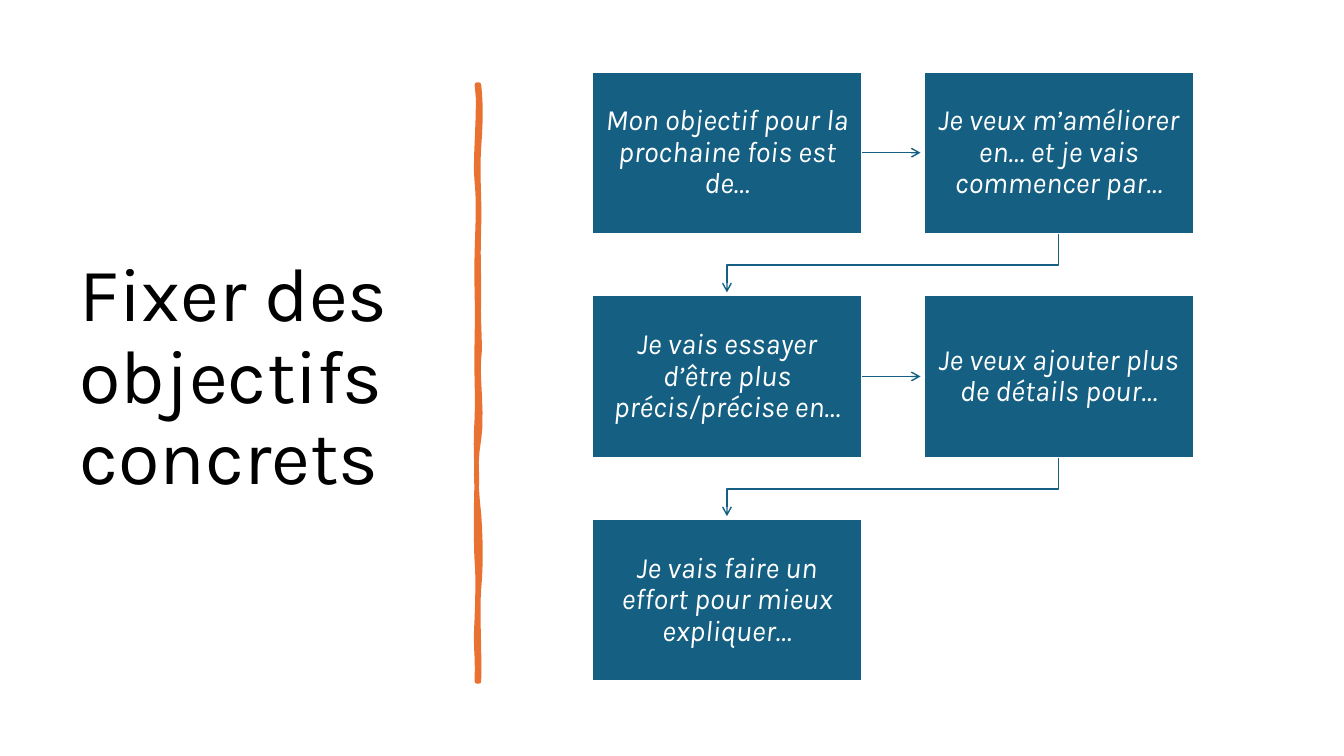
from lxml import etree
from pptx import Presentation
from pptx.dml.color import RGBColor
from pptx.enum.shapes import MSO_CONNECTOR, MSO_SHAPE
from pptx.enum.text import MSO_ANCHOR, PP_ALIGN
from pptx.oxml.ns import qn
from pptx.util import Inches, Pt

RECTANGLE = MSO_SHAPE.RECTANGLE
STRAIGHT = MSO_CONNECTOR.STRAIGHT
MIDDLE = MSO_ANCHOR.MIDDLE
LEFT, CENTER = PP_ALIGN.LEFT, PP_ALIGN.CENTER

FONT = "Karla"
BLUE, ORANGE, WHITE, BLACK = "156082", "E97132", "FFFFFF", "000000"

GOALS = [
    "Mon objectif pour la prochaine fois est de…",
    "Je veux m’améliorer en… et je vais commencer par…",
    "Je vais essayer d’être plus précis/précise en…",
    "Je veux ajouter plus de détails pour…",
    "Je vais faire un effort pour mieux expliquer…",
]
COLUMNS = 2
GRID_LEFT, GRID_TOP = 5.87, 0.71
COLUMN_PITCH, ROW_PITCH = 3.29, 2.22
BOX_WIDTH, BOX_HEIGHT = 2.68, 1.61
ARROW_GAP = 0.03
BEND_DROP = 0.31

BRUSH_START = (4.75, 0.84)
BRUSH_CURVES = [
    ((4.77, 1.02), (4.77, 1.19), (4.75, 1.46)),
    ((4.73, 1.73), (4.76, 1.95), (4.75, 2.26)),
    ((4.74, 2.57), (4.75, 2.62), (4.75, 2.94)),
    ((4.74, 3.25), (4.77, 3.42), (4.75, 3.56)),
    ((4.73, 3.7), (4.79, 4.14), (4.75, 4.36)),
    ((4.71, 4.57), (4.72, 4.84), (4.75, 5.1)),
    ((4.77, 5.36), (4.77, 5.64), (4.75, 5.84)),
    ((4.73, 6.03), (4.76, 6.5), (4.75, 6.76)),
    ((4.74, 6.76), (4.73, 6.76), (4.73, 6.76)),
    ((4.74, 6.46), (4.71, 6.44), (4.73, 6.13)),
    ((4.74, 5.83), (4.74, 5.7), (4.73, 5.57)),
    ((4.72, 5.44), (4.72, 4.95), (4.73, 4.77)),
    ((4.73, 4.59), (4.71, 4.45), (4.73, 4.15)),
    ((4.74, 3.86), (4.72, 3.73), (4.73, 3.35)),
    ((4.74, 2.98), (4.72, 2.81), (4.73, 2.5)),
    ((4.74, 2.18), (4.75, 2), (4.73, 1.81)),
    ((4.7, 1.63), (4.77, 1.04), (4.73, 0.84)),
]
CURVE_STEPS = 6


def color(hex_value):
    """Turn a hex string into a colour."""
    return RGBColor.from_string(hex_value)


def set_line(shape, hex_value, width):
    """Give a shape or connector a solid line."""
    shape.line.color.rgb = color(hex_value)
    shape.line.width = Pt(width)


def add_line_detail(shape, tag, **attributes):
    """Append a join or an arrowhead to the line of a shape."""
    line = shape.line._get_or_add_ln()
    etree.SubElement(line, qn(tag), attributes)


def write_text(shape, text, size, hex_value, align=LEFT, italic=False, insets=(0.1, 0.05)):
    """Write one vertically centred paragraph in a shape."""
    frame = shape.text_frame
    frame.word_wrap = True
    frame.vertical_anchor = MIDDLE
    frame.margin_left = frame.margin_right = Inches(insets[0])
    frame.margin_top = frame.margin_bottom = Inches(insets[1])
    paragraph = frame.paragraphs[0]
    paragraph.alignment = align
    paragraph.line_spacing = 0.9
    run = paragraph.add_run()
    run.text = text
    run.font.name = FONT
    run.font.size = Pt(size)
    run.font.italic = italic
    run.font.color.rgb = color(hex_value)


def add_title(slide, text):
    """Add the slide title on the left."""
    box = slide.shapes.add_textbox(Inches(0.69), Inches(0.7), Inches(3.74), Inches(6.11))
    write_text(box, text, 54, BLACK)


def add_freeform(slide, points, closed):
    """Add an outline through points given in inches."""
    vertices = [(Inches(x), Inches(y)) for x, y in points]
    builder = slide.shapes.build_freeform(*vertices[0])
    builder.add_line_segments(vertices[1:], close=closed)
    shape = builder.convert_to_shape()
    shape.shadow.inherit = False
    return shape


def curve_points(start, curves):
    """Sample a chain of cubic curves."""
    points = [start]
    for first, second, end in curves:
        corners = (points[-1], first, second, end)
        for step in range(1, CURVE_STEPS + 1):
            t = step / CURVE_STEPS
            weights = ((1 - t) ** 3, 3 * t * (1 - t) ** 2, 3 * t * t * (1 - t), t ** 3)
            points.append(tuple(
                sum(weight * corner[axis] for weight, corner in zip(weights, corners))
                for axis in (0, 1)
            ))
    return points


def add_brush_stroke(slide):
    """Add the hand-drawn vertical divider."""
    stroke = add_freeform(slide, curve_points(BRUSH_START, BRUSH_CURVES), closed=True)
    stroke.fill.solid()
    stroke.fill.fore_color.rgb = color(ORANGE)
    set_line(stroke, ORANGE, 3.25)
    add_line_detail(stroke, "a:round")


def add_goal_box(slide, text, left, top):
    """Add one goal box."""
    box = slide.shapes.add_shape(
        RECTANGLE, Inches(left), Inches(top), Inches(BOX_WIDTH), Inches(BOX_HEIGHT))
    box.shadow.inherit = False
    box.fill.solid()
    box.fill.fore_color.rgb = color(BLUE)
    set_line(box, WHITE, 1.5)
    write_text(box, text, 21, WHITE, align=CENTER, italic=True, insets=(0.13, 0.14))
    return box


def style_arrow(shape):
    """Give a line the flow arrow look."""
    set_line(shape, BLUE, 1)
    add_line_detail(shape, "a:tailEnd", type="arrow")


def add_straight_arrow(slide, box, left, top):
    """Add an arrow from a box to its right neighbour."""
    middle = Inches(top + BOX_HEIGHT / 2)
    arrow = slide.shapes.add_connector(
        STRAIGHT, Inches(left + BOX_WIDTH), middle,
        Inches(left + COLUMN_PITCH - ARROW_GAP), middle)
    arrow.begin_connect(box, 3)
    style_arrow(arrow)
    etree.SubElement(arrow._element.spPr, qn("a:effectLst"))


def add_bent_arrow(slide, left, top):
    """Add an arrow from the end of a row to the start of the next."""
    start_x = left + BOX_WIDTH / 2
    end_x = GRID_LEFT + BOX_WIDTH / 2
    bottom = top + BOX_HEIGHT
    bend = bottom + BEND_DROP
    points = [(start_x, bottom), (start_x, bend), (end_x, bend),
              (end_x, top + ROW_PITCH - ARROW_GAP)]
    arrow = add_freeform(slide, points, closed=False)
    arrow.fill.background()
    style_arrow(arrow)


def add_goal_flow(slide):
    """Lay out the goal boxes row by row and join them."""
    for index, goal in enumerate(GOALS):
        row, column = divmod(index, COLUMNS)
        left = GRID_LEFT + column * COLUMN_PITCH
        top = GRID_TOP + row * ROW_PITCH
        box = add_goal_box(slide, goal, left, top)
        if index == len(GOALS) - 1:
            continue
        if column < COLUMNS - 1:
            add_straight_arrow(slide, box, left, top)
        else:
            add_bent_arrow(slide, left, top)


def main():
    """Build and save the slide."""
    presentation = Presentation()
    presentation.slide_width = Inches(13.33)
    presentation.slide_height = Inches(7.5)
    slide = presentation.slides.add_slide(presentation.slide_layouts[6])
    add_title(slide, "Fixer des objectifs concrets")
    add_brush_stroke(slide)
    add_goal_flow(slide)
    presentation.save("out.pptx")


if __name__ == "__main__":
    main()
